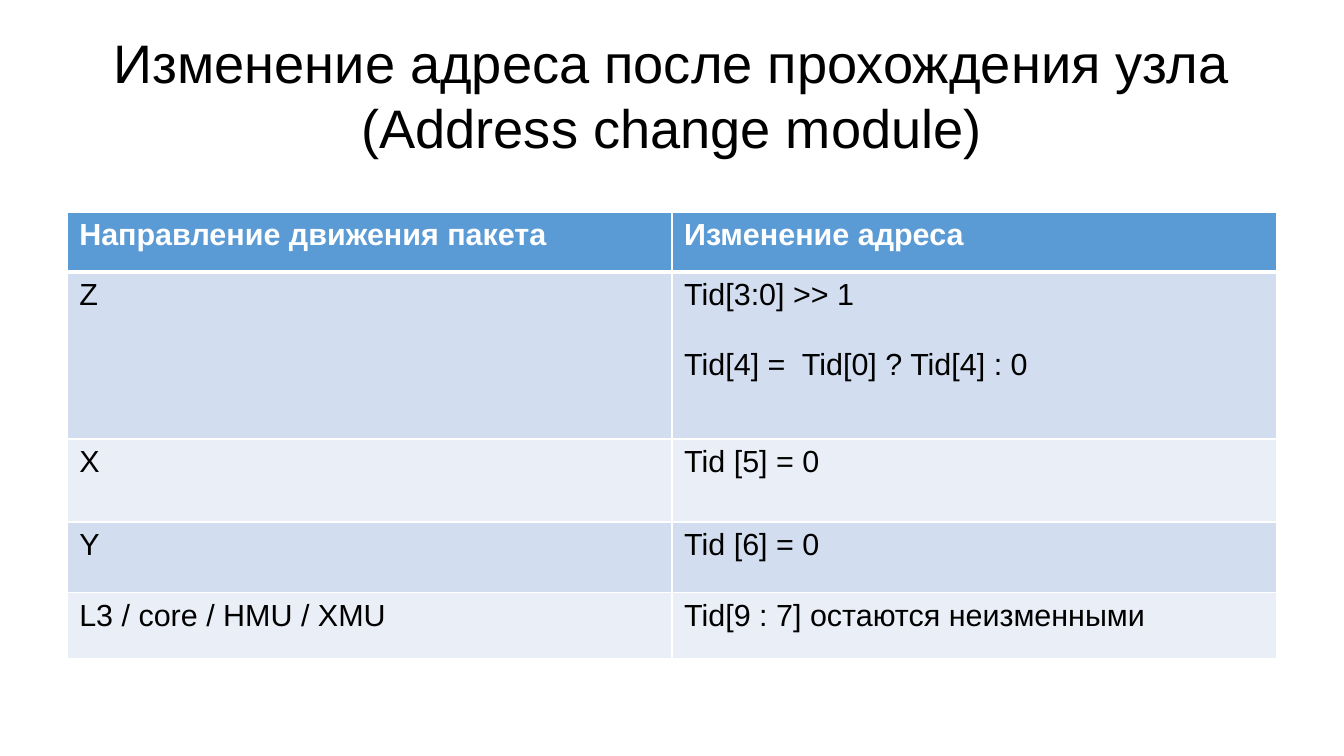
from lxml import etree
from pptx import Presentation
from pptx.dml.color import RGBColor
from pptx.enum.text import MSO_ANCHOR, PP_ALIGN
from pptx.oxml.ns import qn
from pptx.util import Inches, Pt

CENTER = PP_ALIGN.CENTER
MIDDLE = MSO_ANCHOR.MIDDLE

BLACK = RGBColor(0x00, 0x00, 0x00)
WHITE = RGBColor(0xFF, 0xFF, 0xFF)
HEADER_BLUE = RGBColor(0x5B, 0x9B, 0xD5)
BAND_DARK = RGBColor(0xD2, 0xDE, 0xEF)
BAND_LIGHT = RGBColor(0xEA, 0xEF, 0xF7)

FONT = "Arial"
LEFT, WIDTH = 0.55, 9.92
TITLE_LINES = ["Изменение адреса после прохождения узла", "(Address change module)"]
ROW_HEIGHTS = [0.49, 1.37, 0.68, 0.58, 0.54]
ROWS = [
    (["Направление движения пакета"], ["Изменение адреса"]),
    (["Z"], ["Tid[3:0] >> 1", "Tid[4] =  Tid[0] ? Tid[4] : 0"]),
    (["X"], ["Tid [5] = 0"]),
    (["Y"], ["Tid [6] = 0"]),
    (["L3 / core / HMU / XMU"], ["Tid[9 : 7] остаются неизменными"]),
]


def add_run(p, text, size, color, bold=False):
    """Add a formatted run to a paragraph."""
    r = p.add_run()
    r.text = text
    r.font.name = FONT
    r.font.size = Pt(size)
    r.font.bold = bold
    r.font.color.rgb = color


def add_title(s, lines):
    """Add the centred title, one line break between lines."""
    sp = s.shapes.add_textbox(Inches(LEFT), Inches(0.25), Inches(WIDTH), Inches(1.04))
    tf = sp.text_frame
    tf.word_wrap = True
    tf.vertical_anchor = MIDDLE
    tf.margin_left = tf.margin_top = tf.margin_right = tf.margin_bottom = 0
    p = tf.paragraphs[0]
    p.alignment = CENTER
    for i, line in enumerate(lines):
        if i:
            p.add_line_break()
        add_run(p, line, 32, BLACK)


def set_borders(cell, top, bottom):
    """Draw white cell borders, with top and bottom widths in points."""
    tc_pr = cell._tc.get_or_add_tcPr()
    for side, width in (("L", 1), ("R", 1), ("T", top), ("B", bottom)):
        ln = etree.SubElement(tc_pr, qn(f"a:ln{side}"), w=str(Pt(width)))
        fill = etree.SubElement(ln, qn("a:solidFill"))
        etree.SubElement(fill, qn("a:srgbClr"), val=str(WHITE))


def fill_cell(cell, lines, row):
    """Style a cell by its row and write its paragraphs."""
    header = row == 0
    set_borders(cell, 3 if row == 1 else 1, 3 if header else 1)
    cell.fill.solid()
    cell.fill.fore_color.rgb = HEADER_BLUE if header else (BAND_LIGHT, BAND_DARK)[row % 2]
    tf = cell.text_frame
    for i, line in enumerate(lines):
        p = tf.add_paragraph() if i else tf.paragraphs[0]
        if i:
            p.space_before = Pt(21)
        add_run(p, line, 18, WHITE if header else BLACK, header)


def add_address_table(s):
    """Add the table of packet directions and address changes."""
    table = s.shapes.add_table(
        len(ROWS), 2, Inches(LEFT), Inches(1.74), Inches(WIDTH), Inches(sum(ROW_HEIGHTS))
    ).table
    for row, (height, texts) in enumerate(zip(ROW_HEIGHTS, ROWS)):
        table.rows[row].height = Inches(height)
        for col, lines in enumerate(texts):
            fill_cell(table.cell(row, col), lines, row)


def main():
    """Build and save the slide."""
    prs = Presentation()
    prs.slide_width = Inches(11.02)
    prs.slide_height = Inches(6.2)
    s = prs.slides.add_slide(prs.slide_layouts[6])
    add_title(s, TITLE_LINES)
    add_address_table(s)
    prs.save("out.pptx")


if __name__ == "__main__":
    main()
